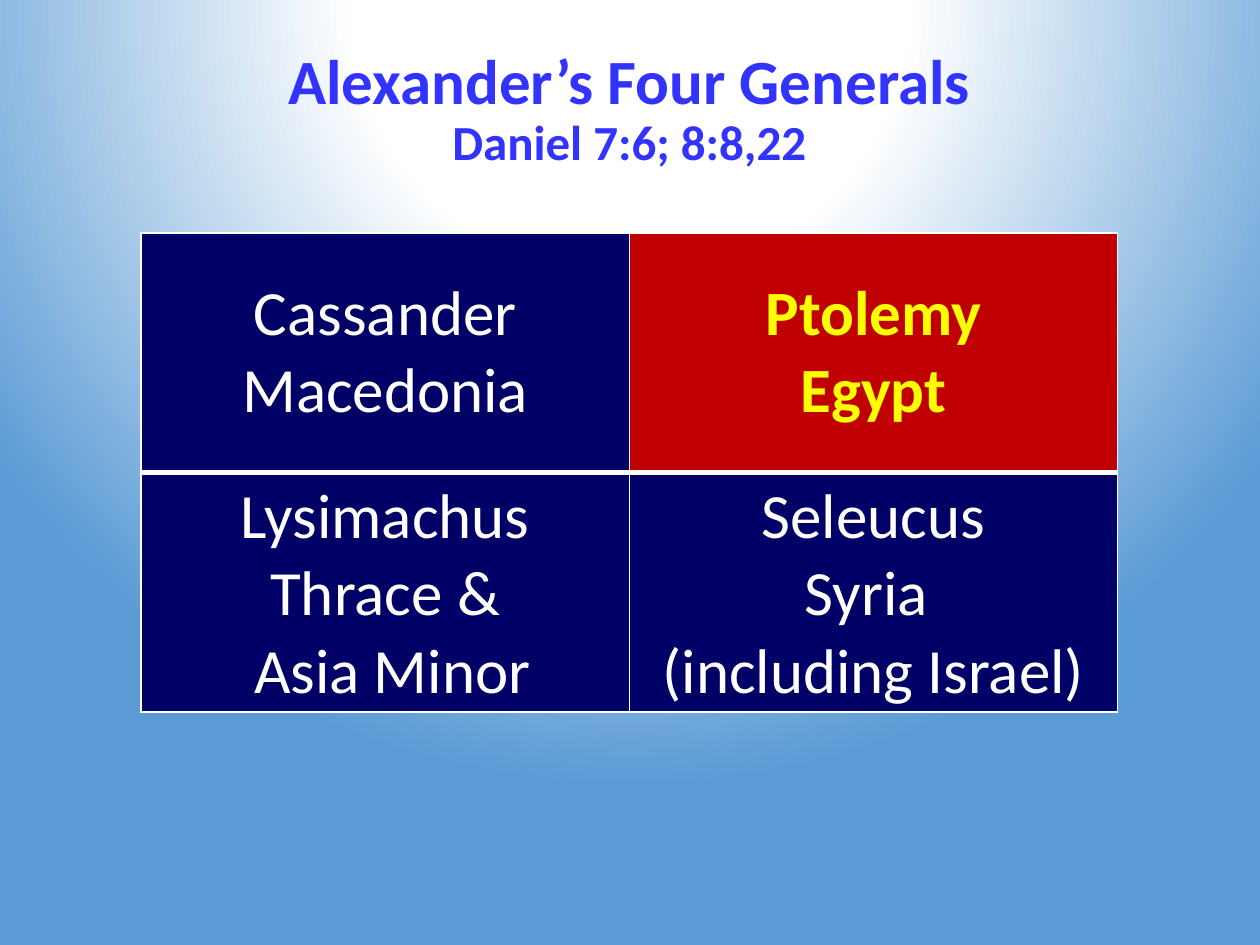
import pptx
import pptx.dml.color
import pptx.enum.text
import pptx.oxml
import pptx.oxml.ns
import pptx.util

Inches = pptx.util.Inches
Pt = pptx.util.Pt
RGBColor = pptx.dml.color.RGBColor
CENTER = pptx.enum.text.PP_ALIGN.CENTER
MIDDLE = pptx.enum.text.MSO_ANCHOR.MIDDLE

BLUE = RGBColor(0x33, 0x33, 0xFF)
NAVY = RGBColor(0x00, 0x00, 0x66)
RED = RGBColor(0xC0, 0x00, 0x00)
YELLOW = RGBColor(0xFF, 0xFF, 0x00)
WHITE = RGBColor(0xFF, 0xFF, 0xFF)
SKY = RGBColor(0x5B, 0x9B, 0xD5)
FONT = "Calibri"
NAMESPACES = pptx.oxml.ns.nsdecls("a", "p")


def set_font(font, size, color, bold):
    font.name = FONT
    font.size = Pt(size)
    font.color.rgb = color
    font.bold = bold


def add_borders(cell, widths):
    properties = cell._tc.get_or_add_tcPr()
    for index, (side, width) in enumerate(widths.items()):
        properties.insert(index, pptx.oxml.parse_xml(
            f'<a:ln{side} {NAMESPACES} w="{Pt(width)}"><a:solidFill>'
            f'<a:srgbClr val="{WHITE}"/></a:solidFill></a:ln{side}>'))


deck = pptx.Presentation()
deck.slide_width = Inches(10)
deck.slide_height = Inches(7.5)
page = deck.slides.add_slide(deck.slide_layouts[6])

stops = "".join(
    f'<a:gs pos="{position * 1000}"><a:srgbClr val="{color}"/></a:gs>'
    for position, color in [(0, WHITE), (35, WHITE), (100, SKY)])
page._element.cSld.insert(0, pptx.oxml.parse_xml(
    f'<p:bg {NAMESPACES}><p:bgPr><a:gradFill rotWithShape="1"><a:gsLst>{stops}</a:gsLst>'
    '<a:path path="circle"><a:fillToRect l="50000" t="-80000" r="50000" b="180000"/></a:path>'
    '</a:gradFill><a:effectLst/></p:bgPr></p:bg>'))

title = page.shapes.add_textbox(Inches(1.93), Inches(0.25), Inches(6.13), Inches(1.25))
title.text_frame.word_wrap = True
title.text_frame.vertical_anchor = MIDDLE
para = title.text_frame.paragraphs[0]
para.alignment = CENTER
para.line_spacing = 0.9
heading = para.add_run()
heading.text = "Alexander’s Four Generals"
set_font(heading.font, 36, BLUE, True)
para.add_line_break()
verses = para.add_run()
verses.text = "Daniel 7:6; 8:8,22"
set_font(verses.font, 28, BLUE, True)

generals = [
    [("Cassander\nMacedonia", NAVY, WHITE, False),
     ("Ptolemy\nEgypt", RED, YELLOW, True)],
    [("Lysimachus\nThrace &\n Asia Minor", NAVY, WHITE, False),
     ("Seleucus\nSyria \n(including Israel)", NAVY, WHITE, False)],
]
borders = [{"L": 1, "R": 1, "T": 1, "B": 3}, {"L": 1, "R": 1, "T": 3, "B": 1}]
table = page.shapes.add_table(2, 2, Inches(1.12), Inches(1.85), Inches(7.75), Inches(3.8)).table
for row, (entries, widths) in enumerate(zip(generals, borders)):
    for column, (text, fill, color, bold) in enumerate(entries):
        cell = table.cell(row, column)
        cell.text = text
        cell.vertical_anchor = MIDDLE
        cell.fill.solid()
        cell.fill.fore_color.rgb = fill
        add_borders(cell, widths)
        for para in cell.text_frame.paragraphs:
            para.alignment = CENTER
            set_font(para.font, 36, color, bold)

deck.save("out.pptx")
